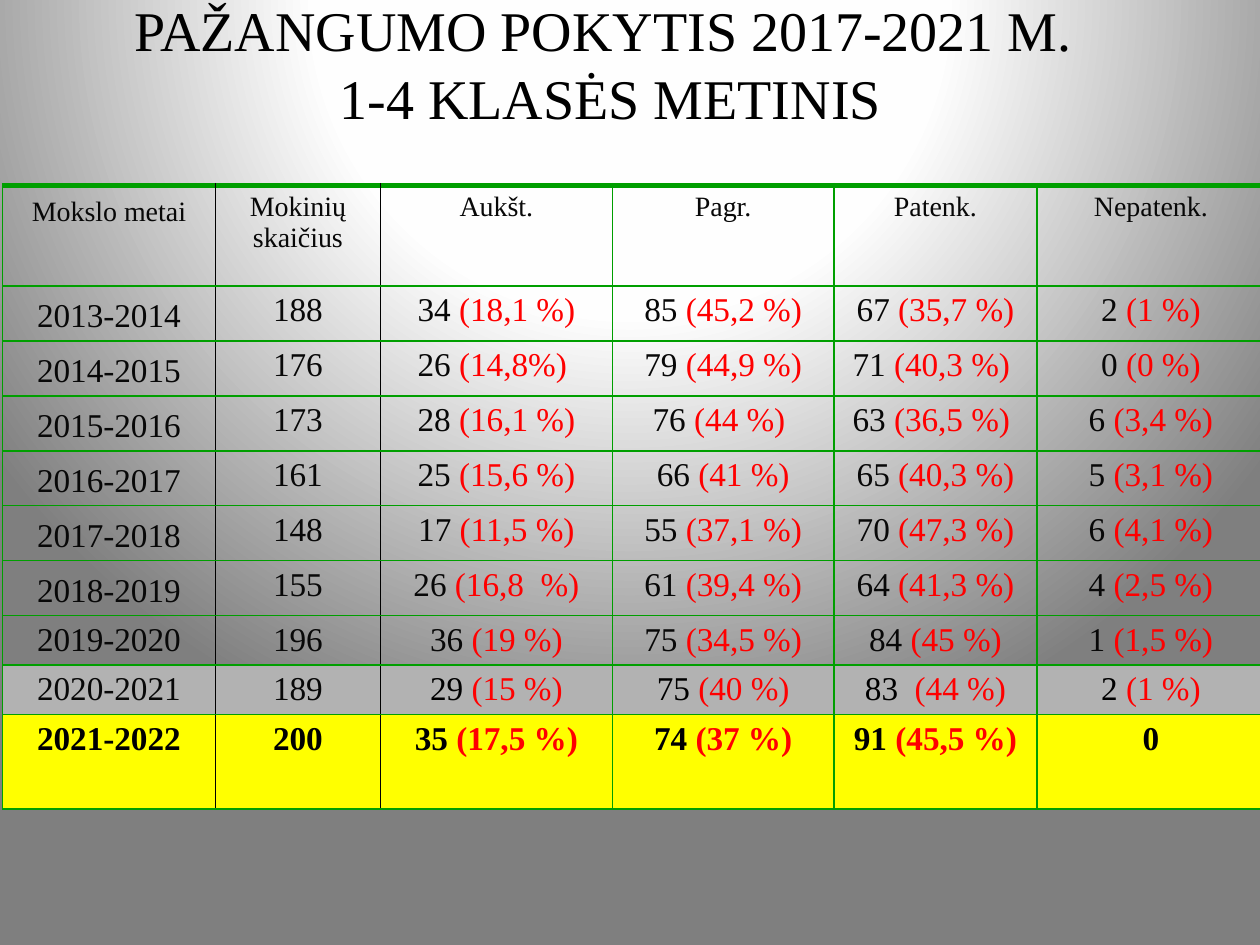
from pptx import Presentation
from pptx.dml.color import RGBColor as RGB
from pptx.enum.text import MSO_ANCHOR as Anchor, MSO_AUTO_SIZE as Fit, PP_ALIGN as Align
from pptx.oxml import parse_xml
from pptx.oxml.ns import nsdecls, qn
from pptx.util import Inches, Pt

HUES = {"black": "000000", "ink": "080808", "red": "FF0000", "green": "009F00",
        "gray": "B2B2B2", "yellow": "FFFF00"}
STOPS = [(0, "FFFFFF"), (40, "FEFEFE"), (100, "7F7F7F")]
TITLE = "PAŽANGUMO POKYTIS 2017-2021 M. \v1-4 KLASĖS METINIS"
COLS = [1.69, 1.31, 1.84, 1.76, 1.61, 1.81]
ROWS = [0.8, 0.38] + [0.39] * 6 + [0.31, 0.75]
FILLS = {8: "gray", 9: "yellow"}
DATA = [
    ["Mokslo metai", "Mokinių skaičius", "Aukšt.", "Pagr.", "Patenk.", "Nepatenk."],
    ["2013-2014", "188", "34 (18,1 %)", "85 (45,2 %)", "67 (35,7 %)", "2 (1 %)"],
    ["2014-2015", "176", "26 (14,8%) ", "79 (44,9 %)", "71 (40,3 %) ", "0 (0 %)"],
    ["2015-2016", "173", "28 (16,1 %)", "76 (44 %) ", "63 (36,5 %) ", "6 (3,4 %)"],
    ["2016-2017", "161", "25 (15,6 %)", "66 (41 %)", "65 (40,3 %)", "5 (3,1 %)"],
    ["2017-2018", "148", "17 (11,5 %)", "55 (37,1 %)", "70 (47,3 %)", "6 (4,1 %)"],
    ["2018-2019", "155", "26 (16,8  %)", "61 (39,4 %)", "64 (41,3 %)", "4 (2,5 %)"],
    ["2019-2020", "196", "36 (19 %)", "75 (34,5 %)", "84 (45 %)", "1 (1,5 %)"],
    ["2020-2021", "189", "29 (15 %)", "75 (40 %)", "83  (44 %)", "2 (1 %)"],
    ["2021-2022", "200", "35 (17,5 %)", "74 (37 %)", "91 (45,5 %)", "0"],
]


def style(run, size, hue, bold):
    """Format one run."""
    font = run.font
    font.name, font.size, font.bold = "Times New Roman", Pt(size), bold
    font.color.rgb = RGB.from_string(HUES[hue])


def write(frame, text, size=19, hue="ink", bold=False, space=None):
    """Write centred text, with any bracketed share in red."""
    para = frame.paragraphs[0]
    para.alignment, para.line_spacing = Align.CENTER, space
    count, mark, share = text.partition("(")
    para.text = count
    for run in para.runs:
        style(run, size, hue, bold)
    if mark:
        run = para.add_run()
        run.text = mark + share
        style(run, size, "red", bold)


def paint(slide):
    """Give the slide its round gradient."""
    slide.background.fill.gradient()
    old = slide.element.find(".//" + qn("a:gradFill"))
    stops = "".join(f'<a:gs pos="{at * 1000}"><a:srgbClr val="{hue}"/></a:gs>'
                    for at, hue in STOPS)
    new = parse_xml(
        f'<a:gradFill {nsdecls("a")} rotWithShape="1"><a:gsLst>{stops}</a:gsLst>'
        '<a:path path="circle"><a:fillToRect l="50000" t="-80000" r="50000" b="180000"/>'
        '</a:path></a:gradFill>')
    old.getparent().replace(old, new)


def edge(cell, row, col):
    """Draw the four borders of a cell."""
    sides = {"L": ("black" if col in (1, 2) else "green", 1),
             "R": ("black" if col in (0, 1) else "green", 1),
             "T": ("green", 1 if row else 3),
             "B": ("green", 1)}
    props = cell._tc.get_or_add_tcPr()
    for side, (hue, width) in sides.items():
        props.append(parse_xml(
            f'<a:ln{side} {nsdecls("a")} w="{Pt(width)}"><a:solidFill>'
            f'<a:srgbClr val="{HUES[hue]}"/></a:solidFill></a:ln{side}>'))


def fill(cell, row, col, text):
    """Set the text, margins, borders and fill of a cell."""
    edge(cell, row, col)
    if row in FILLS:
        cell.fill.solid()
        cell.fill.fore_color.rgb = RGB.from_string(HUES[FILLS[row]])
    else:
        cell.fill.background()
    side = 0.19 if col == 0 else 0.1 if row else 0.2
    cell.margin_left = cell.margin_right = Inches(side)
    dark = row == 9 or row == 8 and col > 1
    write(cell.text_frame, text, size=19 if row else 16,
          hue="black" if dark else "ink", bold=row == 9,
          space=1.15 if col == 0 and row < 7 else None)


def add_grid(slide):
    """Add the table of results by school year."""
    grid = slide.shapes.add_table(len(ROWS), len(COLS), Inches(0.02), Inches(1.47),
                                  Inches(sum(COLS)), Inches(sum(ROWS))).table
    grid.first_row = grid.horz_banding = False
    for col, width in zip(grid.columns, COLS):
        col.width = Inches(width)
    for row, height in zip(grid.rows, ROWS):
        row.height = Inches(height)
    for row, texts in enumerate(DATA):
        for col, text in enumerate(texts):
            fill(grid.cell(row, col), row, col, text)


def add_title(slide):
    """Place and format the title."""
    title = slide.shapes.title
    title.left, title.top = Inches(0.02), Inches(-0.11)
    title.width, title.height = Inches(9.65), Inches(1.22)
    frame = title.text_frame
    frame.auto_size, frame.vertical_anchor = Fit.NONE, Anchor.MIDDLE
    write(frame, TITLE, size=32, hue="black")


def main():
    """Build and save the slide."""
    deck = Presentation()
    deck.slide_width, deck.slide_height = Inches(10), Inches(7.5)
    slide = deck.slides.add_slide(deck.slide_layouts[5])
    paint(slide)
    add_title(slide)
    add_grid(slide)
    deck.save("out.pptx")


if __name__ == "__main__":
    main()
